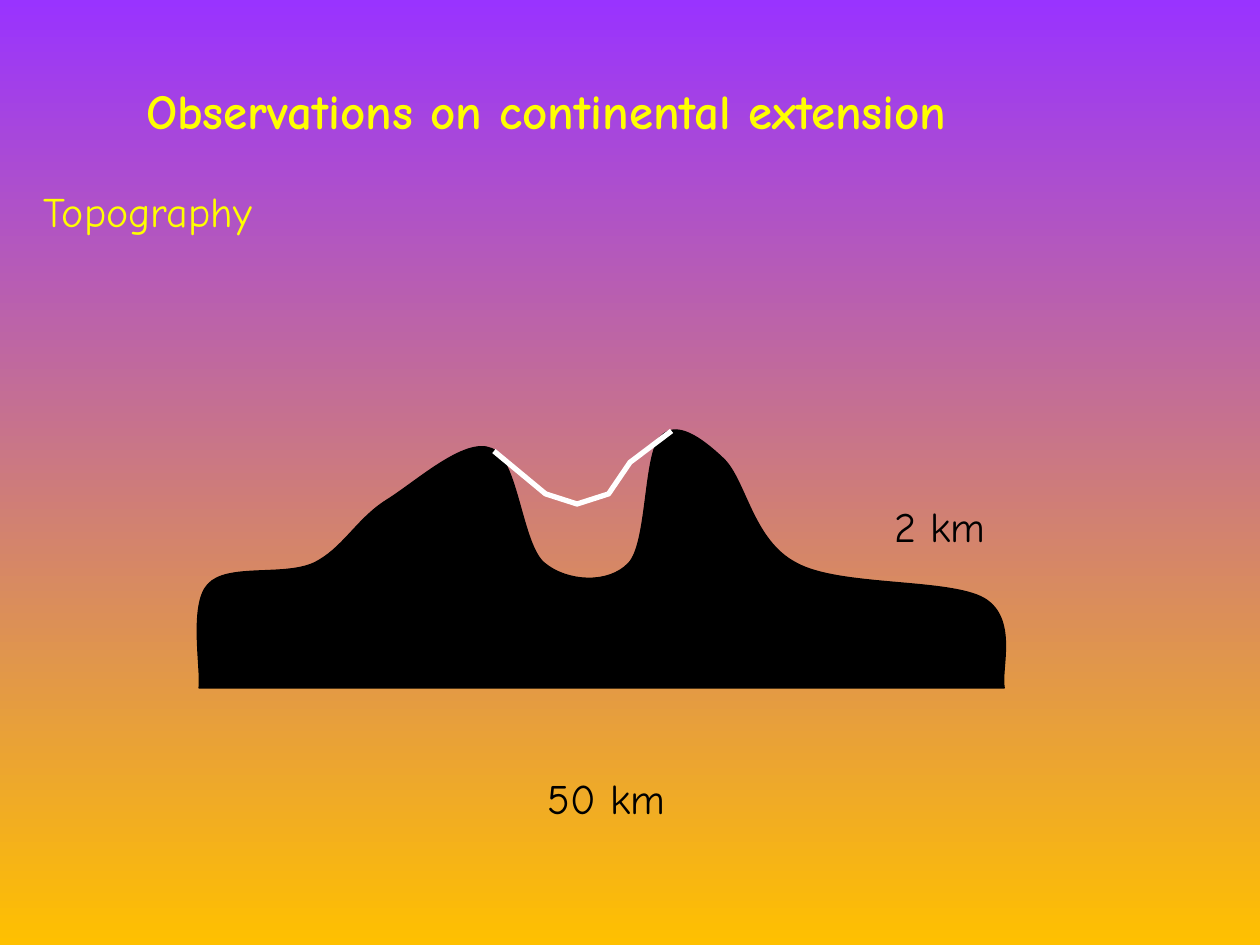
"""Build a slide showing the topography of continental extension."""
from lxml.etree import SubElement
from pptx import Presentation
from pptx.dml.color import RGBColor
from pptx.enum.text import MSO_ANCHOR, MSO_AUTO_SIZE, PP_ALIGN
from pptx.oxml.ns import qn
from pptx.util import Inches, Pt

FONT = "Comic Neue"
COLORS = {"sky": "9933FF", "ground": "FFC000", "heading": "FFFF00",
          "rock": "000000", "valley": "FFFFFF"}


def format_text(text_frame, size, color, bold=False):
    for run in text_frame.paragraphs[0].runs:
        run.font.name = FONT
        run.font.size = Pt(size)
        run.font.bold = bold
        run.font.color.rgb = RGBColor.from_string(COLORS[color])


def add_outline(slide, points, color, width, closed):
    vertices = [(Inches(x), Inches(y)) for x, y in points]
    builder = slide.shapes.build_freeform(*vertices[0])
    builder.add_line_segments(vertices[1:], close=closed)
    shape = builder.convert_to_shape()
    shape.shadow.inherit = False
    shape.line.color.rgb = RGBColor.from_string(COLORS[color])
    shape.line.width = Pt(width)
    return shape


presentation = Presentation()
presentation.slide_width, presentation.slide_height = Inches(10), Inches(7.5)
slide = presentation.slides.add_slide(presentation.slide_layouts[5])

background = slide.background.fill
background.gradient()
background.gradient_angle = 270
for stop, position, color in zip(background.gradient_stops, (0, 1), ("sky", "ground")):
    stop.position = position
    stop.color.rgb = RGBColor.from_string(COLORS[color])

title = slide.shapes.title
title.left, title.top = Inches(0.5), Inches(0.33)
title.width, title.height = Inches(7.67), Inches(1.08)
title.text_frame.text = "Observations on continental extension"
title.text_frame.vertical_anchor = MSO_ANCHOR.MIDDLE
title.text_frame.paragraphs[0].alignment = PP_ALIGN.CENTER
format_text(title.text_frame, 28, "heading", bold=True)

topic = slide.shapes.add_textbox(Inches(0.25), Inches(1.42), Inches(9.17), Inches(4.7))
topic.text_frame.word_wrap = True
topic.text_frame.text = "Topography"
format_text(topic.text_frame, 24, "heading")

mountain_points = [
    (1.58, 5.46),
    (1.6, 5.32), (1.5, 4.8), (1.65, 4.64),
    (1.8, 4.47), (2.25, 4.58), (2.49, 4.47),
    (2.72, 4.36), (2.83, 4.12), (3.07, 3.97),
    (3.31, 3.82), (3.69, 3.47), (3.9, 3.56),
    (4.11, 3.64), (4.14, 4.32), (4.32, 4.47),
    (4.5, 4.62), (4.83, 4.64), (4.99, 4.47),
    (5.14, 4.31), (5.11, 3.61), (5.24, 3.47),
    (5.36, 3.33), (5.56, 3.47), (5.74, 3.64),
    (5.92, 3.81), (5.97, 4.29), (6.32, 4.47),
    (6.66, 4.66), (7.53, 4.59), (7.81, 4.75),
    (8.08, 4.91), (7.94, 5.31), (7.97, 5.46),
    (7.97, 5.46), (1.58, 5.46), (1.58, 5.46),
]
mountain = add_outline(slide, mountain_points, "rock", 0.75, closed=True)
mountain.fill.solid()
mountain.fill.fore_color.rgb = RGBColor.from_string(COLORS["rock"])
segments = list(mountain._element.iter(qn("a:lnTo")))
outline = segments[0].getparent()
for first in range(0, len(segments), 3):
    curve = SubElement(outline, qn("a:cubicBezTo"))
    segments[first].addprevious(curve)
    for segment in segments[first:first + 3]:
        curve.append(segment[0])
        outline.remove(segment)

for text, left, top, width in [("50 km", 4.25, 6.08, 1.42), ("2 km", 7, 3.92, 1.17)]:
    label = slide.shapes.add_textbox(Inches(left), Inches(top), Inches(width), Inches(0.5))
    label.text_frame.word_wrap = True
    label.text_frame.auto_size = MSO_AUTO_SIZE.SHAPE_TO_FIT_TEXT
    label.text_frame.text = text
    format_text(label.text_frame, 24, "rock")

valley_points = [(3.92, 3.58), (4.33, 3.92), (4.58, 4), (4.83, 3.92), (5, 3.67), (5.33, 3.42)]
valley = add_outline(slide, valley_points, "valley", 3, closed=False)
valley.fill.background()

presentation.save("out.pptx")
